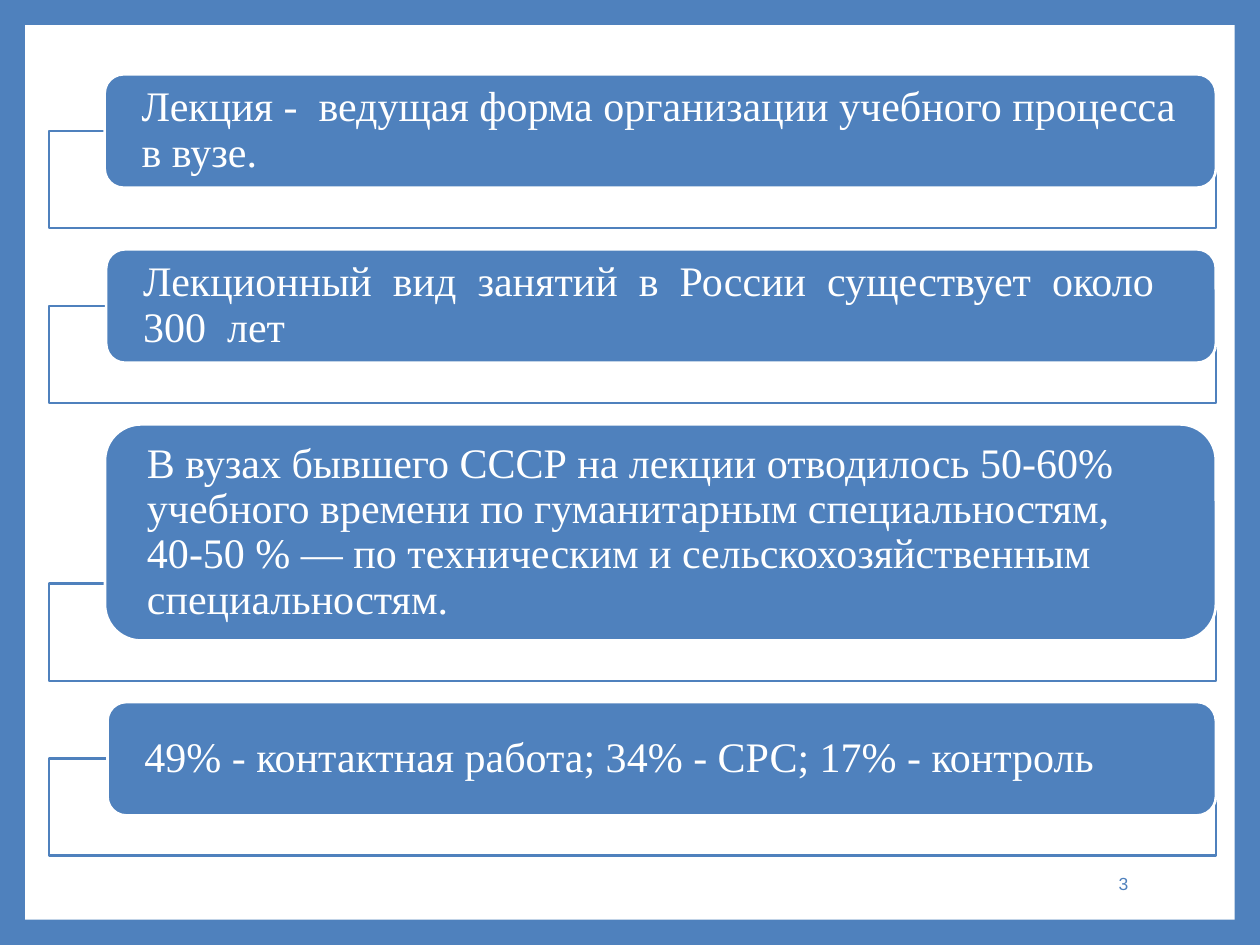
from typing import NamedTuple

from lxml.etree import SubElement
from pptx import Presentation
from pptx.dml.color import RGBColor
from pptx.enum.shapes import MSO_SHAPE as Shape
from pptx.enum.text import MSO_ANCHOR as Anchor, PP_ALIGN as Align
from pptx.oxml.ns import qn
from pptx.util import Pt

BLUE = RGBColor(0x4F, 0x81, 0xBD)
WHITE = RGBColor(0xFF, 0xFF, 0xFF)

SLIDE_W, SLIDE_H, BORDER = 720, 540, 14.4
FRAME_LEFT, FRAME_W, FRAME_H = 28, 667, 55.5
CARD_RIGHT = 694.8
FIRST_TOP = 42.5
CARD_GAP = 35.2
OVERLAP = 32.4  # how far a card reaches down into its frame


class Card(NamedTuple):
    text: str
    left: float
    height: float = 64.8


CARDS = [
    Card("Лекция -  ведущая форма организации учебного процесса в вузе.", 59.8),
    Card("Лекционный  вид  занятий  в  России  существует  около  300  лет ", 60.7),
    Card("В вузах бывшего СССР на лекции отводилось 50-60% учебного времени "
         "по гуманитарным специальностям, 40-50 % — по техническим и "
         "сельскохозяйственным специальностям.", 60, 123.5),
    Card("49% - контактная работа; 34% - СРС; 17% - контроль", 61.4),
]


def add_box(slide, kind: Shape, left: float, top: float, width: float,
            height: float, fill: RGBColor, line: RGBColor | None = None):
    sp = slide.shapes.add_shape(kind, Pt(left), Pt(top), Pt(width), Pt(height))
    sp.shadow.inherit = False
    sp.fill.solid()
    sp.fill.fore_color.rgb = fill
    if line is None:
        sp.line.fill.background()
    else:
        sp.line.color.rgb = line
        sp.line.width = Pt(1.5)
    return sp


def set_text(sp, text: str, font: str, size: float, color: RGBColor,
             align: Align) -> None:
    tf = sp.text_frame
    tf.word_wrap = True
    tf.vertical_anchor = Anchor.MIDDLE
    p = tf.paragraphs[0]
    p.text = text
    p.alignment = align
    r = p.runs[0]
    r.font.name = font
    r.font.size = Pt(size)
    r.font.color.rgb = color


def add_card(slide, card: Card, top: float) -> None:
    """Draw the outlined frame and the rounded card that overlaps it."""
    frame = add_box(slide, Shape.RECTANGLE, FRAME_LEFT,
                    top + card.height - OVERLAP, FRAME_W, FRAME_H, WHITE, BLUE)
    color = frame.fill._xPr.find(qn("a:solidFill"))[0]
    SubElement(color, qn("a:alpha"), val="90000")

    sp = add_box(slide, Shape.ROUNDED_RECTANGLE, card.left, top,
                 CARD_RIGHT - card.left, card.height, BLUE, WHITE)
    set_text(sp, card.text, "Times New Roman", 24, WHITE, Align.LEFT)
    tf = sp.text_frame
    tf.margin_left = tf.margin_right = Pt(18)
    tf.margin_top = tf.margin_bottom = 0
    tf.paragraphs[0].line_spacing = 0.9


def main() -> None:
    prs = Presentation()
    prs.slide_width, prs.slide_height = Pt(SLIDE_W), Pt(SLIDE_H)
    slide = prs.slides.add_slide(prs.slide_layouts[6])
    background = slide.background.fill
    background.solid()
    background.fore_color.rgb = BLUE
    add_box(slide, Shape.RECTANGLE, BORDER, BORDER,
            SLIDE_W - 2 * BORDER, SLIDE_H - 2 * BORDER, WHITE)

    top = FIRST_TOP
    for card in CARDS:
        add_card(slide, card, top)
        top += card.height + CARD_GAP

    number = slide.shapes.add_textbox(Pt(551), Pt(490.3), Pt(100.8), Pt(28.8))
    set_text(number, "3", "Arial", 10, BLUE, Align.RIGHT)
    prs.save("out.pptx")


if __name__ == "__main__":
    main()
